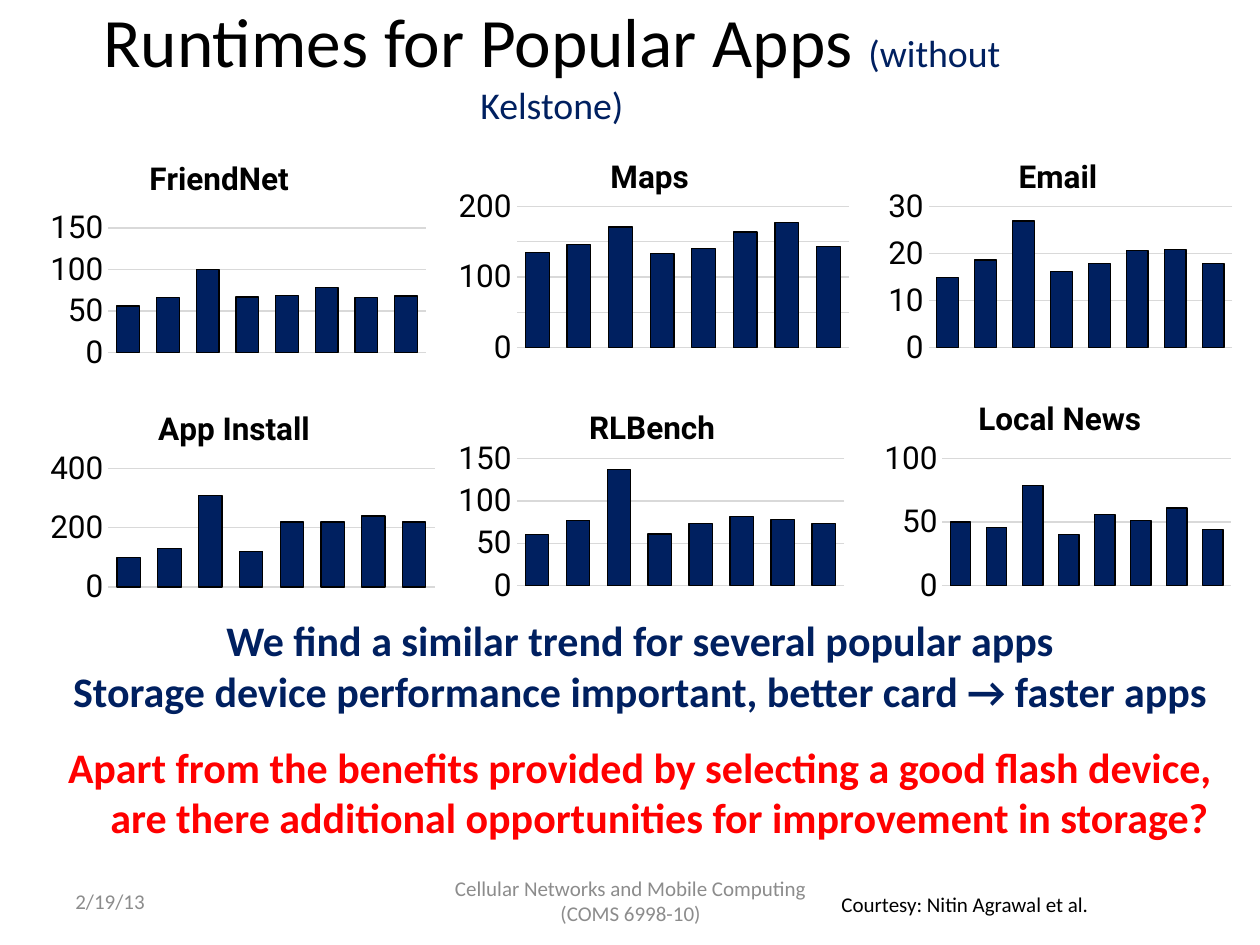
"""Slide with six app runtime charts, their conclusions and a footer."""
import pptx
import pptx.chart.data
import pptx.dml.color
import pptx.enum.chart
import pptx.enum.text
import pptx.util
from lxml import etree
from pptx.util import Inches, Pt

COLORS = {"navy": "002060", "red": "FF0000", "black": "000000",
          "gray": "8C8C8C", "grid": "D9D9D9"}
ALIGN = pptx.enum.text.PP_ALIGN
ANCHOR = pptx.enum.text.MSO_ANCHOR


def style(font, size, color, bold=False, name="Calibri"):
    font.size, font.bold, font.name = Pt(size), bold, name
    font.color.rgb = pptx.dml.color.RGBColor.from_string(COLORS[color])


def place(element, box, frame, inner=False):
    namespace = etree.QName(element).namespace
    layout = element.find(f"{{{namespace}}}layout")
    if layout is None:
        layout = etree.Element(f"{{{namespace}}}layout")
        text = element.find(f"{{{namespace}}}tx")
        element.insert(0 if text is None else element.index(text) + 1, layout)
    for child in list(layout):
        layout.remove(child)
    manual = etree.SubElement(layout, f"{{{namespace}}}manualLayout")
    left, top, width, height = frame
    settings = [("layoutTarget", "inner")] if inner else []
    settings += [("xMode", "edge"), ("yMode", "edge"),
                 ("x", (box[0] - left) / width), ("y", (box[1] - top) / height)]
    if inner:
        settings += [("w", box[2] / width), ("h", box[3] / height)]
    for tag, value in settings:
        value = value if isinstance(value, str) else f"{value:.4f}"
        etree.SubElement(manual, f"{{{namespace}}}{tag}").set("val", value)


deck = pptx.Presentation()
deck.slide_width, deck.slide_height = Inches(10), Inches(7.5)
slide = deck.slides.add_slide(deck.slide_layouts[6])

heading = slide.shapes.add_textbox(Inches(0.42), Inches(0.08), Inches(7.92), Inches(0.83))
heading.text_frame.word_wrap = True
heading.text_frame.vertical_anchor = ANCHOR.MIDDLE
heading_line = heading.text_frame.paragraphs[0]
heading_line.alignment = ALIGN.CENTER
for words, size, color in [("Runtimes for Popular Apps ", 39.6, "black"),
                           ("(without Kelstone)", 21.6, "navy")]:
    run = heading_line.add_run()
    run.text = words
    style(run.font, size, color)

conclusions = slide.shapes.add_textbox(Inches(0.33), Inches(4.83), Inches(9.5), Inches(1.92))
conclusions.text_frame.word_wrap = True
statements = [
    ("We find a similar trend for several popular apps", "navy", 0),
    ("Storage device performance important, better card → faster apps", "navy", 0),
    ("Apart from the benefits provided by selecting a good flash device, "
     "are there additional opportunities for improvement in storage?", "red", 14.6),
]
conclusions.text_frame.text = "\n".join(words for words, _, _ in statements)
for paragraph, (_, color, gap) in zip(conclusions.text_frame.paragraphs, statements):
    paragraph.alignment = ALIGN.CENTER
    properties = paragraph._p.get_or_add_pPr()
    properties.set("marL", str(Inches(0.31)))
    properties.set("indent", str(Inches(-0.31)))
    if gap:
        paragraph.space_before = Pt(gap)
    style(paragraph.runs[0].font, 24, color, bold=True)

apps = [
    ("FriendNet", (0.33, 1, 3.11, 1.99), (1.14, 1.21), (0.86, 1.81, 2.52, 0.99),
     150, 50, (56, 66, 100, 67, 69, 78, 66, 68)),
    ("Maps", (3.58, 0.83, 3.22, 2.12), (4.8, 1.19), (4.1, 1.64, 2.64, 1.12),
     200, 50, (135, 146, 171, 133, 140, 164, 177, 143)),
    ("Email", (7, 0.83, 2.84, 2.12), (8.04, 1.19), (7.37, 1.64, 2.41, 1.12),
     30, 10, (14.9, 18.6, 26.9, 16.2, 17.9, 20.6, 20.9, 17.9)),
    ("App Install", (0.33, 2.91, 3.18, 1.94), (1.21, 3.19), (0.86, 3.72, 2.59, 0.94),
     400, 200, (100, 130, 310, 120, 220, 220, 240, 220)),
    ("RLBench", (3.58, 2.83, 3.18, 2), (4.63, 3.18), (4.1, 3.64, 2.6, 1.01),
     150, 50, (60, 77, 137, 61, 73, 82, 78, 73)),
    ("Local News", (6.96, 2.83, 2.88, 2), (7.72, 3.11), (7.48, 3.64, 2.29, 1.01),
     100, 50, (50, 46, 79, 40, 56, 51, 61, 44)),
]
for app, frame, title_at, plot_at, top_value, step, runtimes in apps:
    data = pptx.chart.data.CategoryChartData()
    data.categories = [str(number) for number in range(1, 9)]
    data.add_series("Series 1", runtimes)
    chart = slide.shapes.add_chart(pptx.enum.chart.XL_CHART_TYPE.COLUMN_CLUSTERED,
                                   *map(Inches, frame), data).chart
    style(chart.font, 18, "black", name="Roboto")
    chart.has_legend = False
    chart.chart_title.text_frame.text = app
    style(chart.chart_title.text_frame.paragraphs[0].runs[0].font, 18, "black", True, "Roboto")
    chart.chart_title.include_in_layout = False
    place(chart.chart_title._element, title_at, frame)
    place(chart._chartSpace.chart.plotArea, plot_at, frame, inner=True)

    chart.category_axis.visible = False
    scale = chart.value_axis
    scale.minimum_scale, scale.maximum_scale, scale.major_unit = 0, top_value, step
    scale.major_tick_mark = pptx.enum.chart.XL_TICK_MARK.NONE
    scale.format.line.fill.background()
    grid = scale.major_gridlines.format.line
    grid.width = Pt(0.75)
    grid.color.rgb = pptx.dml.color.RGBColor.from_string(COLORS["grid"])

    bars = chart.plots[0]
    bars.gap_width, bars.overlap, bars.vary_by_categories = 75, -25, False
    look = bars.series[0].format
    look.fill.solid()
    look.fill.fore_color.rgb = pptx.dml.color.RGBColor.from_string(COLORS["navy"])
    look.line.width = Pt(0.75)
    look.line.color.rgb = pptx.dml.color.RGBColor.from_string(COLORS["black"])

footers = [
    ("2/19/13", (0.5, 6.95, 2.33, 0.4), "gray", ALIGN.LEFT, ANCHOR.MIDDLE, True),
    ("Cellular Networks and Mobile Computing (COMS 6998-10)",
     (3.42, 6.95, 3.17, 0.4), "gray", ALIGN.CENTER, ANCHOR.MIDDLE, True),
    ("Courtesy: Nitin Agrawal et al.",
     (6.58, 7.03, 2.19, 0.3), "black", ALIGN.LEFT, ANCHOR.TOP, False),
]
for words, box, color, alignment, anchor, wrap in footers:
    footer = slide.shapes.add_textbox(*map(Inches, box)).text_frame
    footer.text = words
    footer.word_wrap, footer.vertical_anchor = wrap, anchor
    footer.paragraphs[0].alignment = alignment
    style(footer.paragraphs[0].runs[0].font, 12, color)

deck.save("out.pptx")
